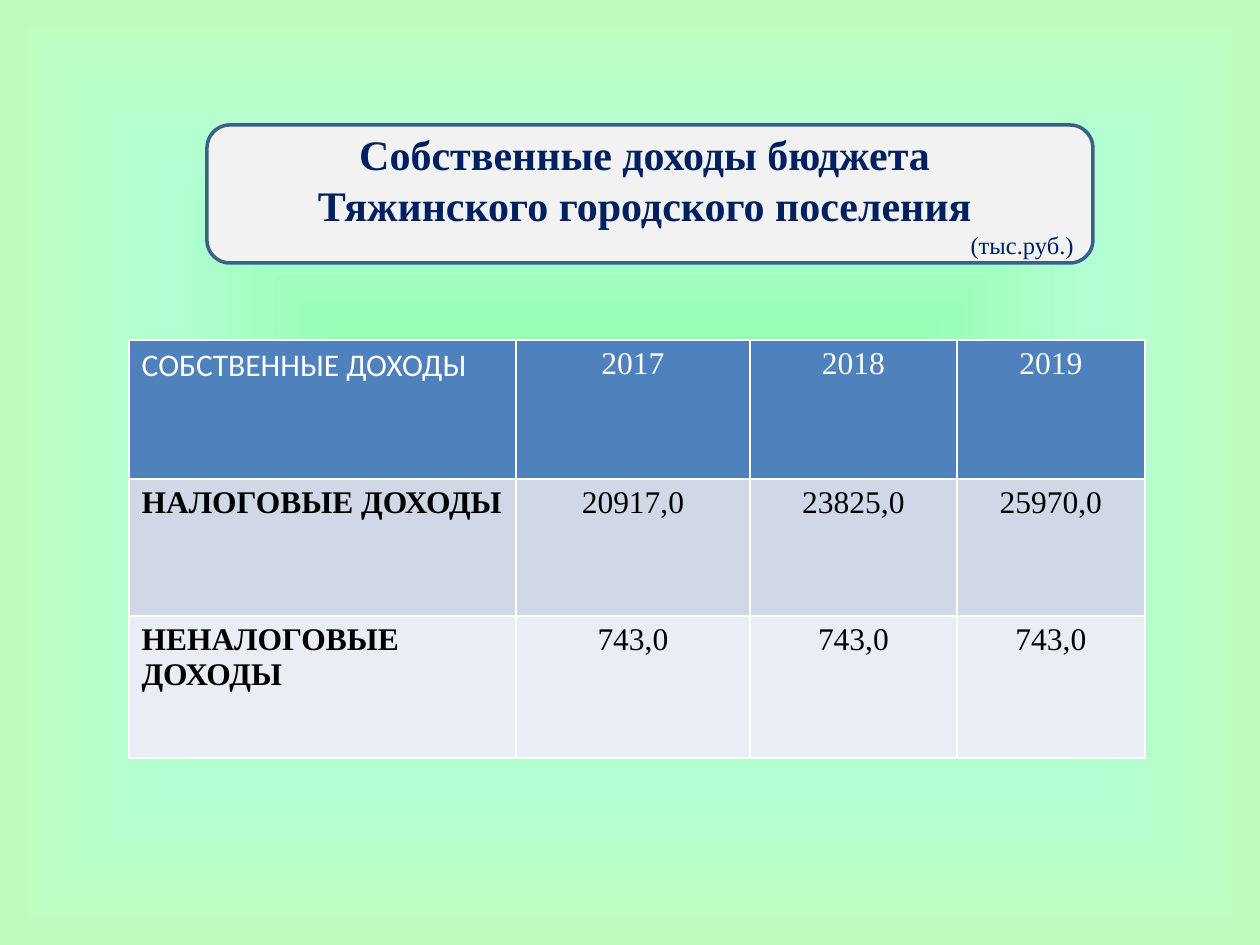
"""Build a slide with a title panel and a table of own budget revenues."""
from lxml import etree
from pptx import Presentation
from pptx.dml.color import RGBColor
from pptx.enum.shapes import MSO_SHAPE
from pptx.enum.text import MSO_ANCHOR, PP_ALIGN
from pptx.oxml import parse_xml
from pptx.oxml.ns import qn
from pptx.util import Pt

PX = 914400 // 126
LEFT, CENTER, RIGHT = PP_ALIGN.LEFT, PP_ALIGN.CENTER, PP_ALIGN.RIGHT
MIDDLE, ROUNDED = MSO_ANCHOR.MIDDLE, MSO_SHAPE.ROUNDED_RECTANGLE
DRAWING = "http://schemas.openxmlformats.org/drawingml/2006/main"
THEME = {
    "serif": "Times New Roman", "sans": "Calibri",
    "title": 24, "unit": 14, "cell": 18,
    "navy": "002060", "panel": "F2F2F2", "outline": "3A5F8C",
    "white": "FFFFFF", "black": "000000",
    "rows": ["4F81BD", "D0D8E8", "E9EDF4"],
    "glow": [(3, "83FBA0"), (66, "B3FFD4"), (100, "BFFCBC")],
}


def write(para, text, align, color, **formats):
    para.alignment = align
    span = para.add_run()
    span.text = text
    span.font.color.rgb = RGBColor.from_string(color)
    for name, value in formats.items():
        setattr(span.font, name, value)


def add_border(cell, side):
    line = etree.SubElement(cell._tc.get_or_add_tcPr(), qn(f"a:{side}"), w=str(Pt(1)))
    fill = etree.SubElement(line, qn("a:solidFill"))
    etree.SubElement(fill, qn("a:srgbClr"), val=THEME["white"])


deck = Presentation()
deck.slide_width, deck.slide_height = 1260 * PX, 945 * PX
page = deck.slides.add_slide(deck.slide_layouts[6])

page.background.fill.solid()
stops = "".join(
    f'<a:gs pos="{place * 1000}"><a:srgbClr val="{color}"/></a:gs>'
    for place, color in THEME["glow"]
)
gradient = parse_xml(
    f'<a:gradFill xmlns:a="{DRAWING}" rotWithShape="1"><a:gsLst>{stops}</a:gsLst>'
    '<a:path path="rect"><a:fillToRect l="50000" t="50000" r="50000" b="50000"/></a:path>'
    "</a:gradFill>"
)
solid = page.background._cSld.find(".//" + qn("a:solidFill"))
solid.getparent().replace(solid, gradient)

panel = page.shapes.add_shape(ROUNDED, 207 * PX, 125 * PX, 886 * PX, 138 * PX)
panel.shadow.inherit = False
panel.fill.solid()
panel.fill.fore_color.rgb = RGBColor.from_string(THEME["panel"])
panel.line.color.rgb = RGBColor.from_string(THEME["outline"])
panel.line.width = Pt(2)
frame = panel.text_frame
frame.word_wrap = True
frame.vertical_anchor = MIDDLE
TITLE = [
    ("Собственные доходы бюджета ", CENTER, "title", True),
    ("Тяжинского городского поселения ", CENTER, "title", True),
    ("(тыс.руб.)", RIGHT, "unit", False),
]
for index, (text, align, size, bold) in enumerate(TITLE):
    para = frame.add_paragraph() if index else frame.paragraphs[0]
    write(para, text, align, THEME["navy"],
          name=THEME["serif"], size=Pt(THEME[size]), bold=bold)

REVENUES = [
    ["СОБСТВЕННЫЕ ДОХОДЫ", "2017", "2018", "2019"],
    ["НАЛОГОВЫЕ ДОХОДЫ", "20917,0", "23825,0", "25970,0"],
    ["НЕНАЛОГОВЫЕ ДОХОДЫ", "743,0", "743,0", "743,0"],
]
WIDTHS, HEIGHTS = [387, 234, 207, 188], [139, 137, 142]
table = page.shapes.add_table(
    len(HEIGHTS), len(WIDTHS), 129 * PX, 340 * PX, sum(WIDTHS) * PX, sum(HEIGHTS) * PX
).table
for column, width in zip(table.columns, WIDTHS):
    column.width = width * PX
for row, height in zip(table.rows, HEIGHTS):
    row.height = height * PX
for r, values in enumerate(REVENUES):
    for c, text in enumerate(values):
        cell = table.cell(r, c)
        for side in ("lnL", "lnR", "lnT", "lnB"):
            add_border(cell, side)
        cell.fill.solid()
        cell.fill.fore_color.rgb = RGBColor.from_string(THEME["rows"][r])
        write(cell.text_frame.paragraphs[0], text,
              CENTER if c else LEFT,
              THEME["black"] if r else THEME["white"],
              name=THEME["serif"] if r or c else THEME["sans"],
              size=Pt(THEME["cell"]), bold=r > 0 and c == 0)

deck.save("out.pptx")
